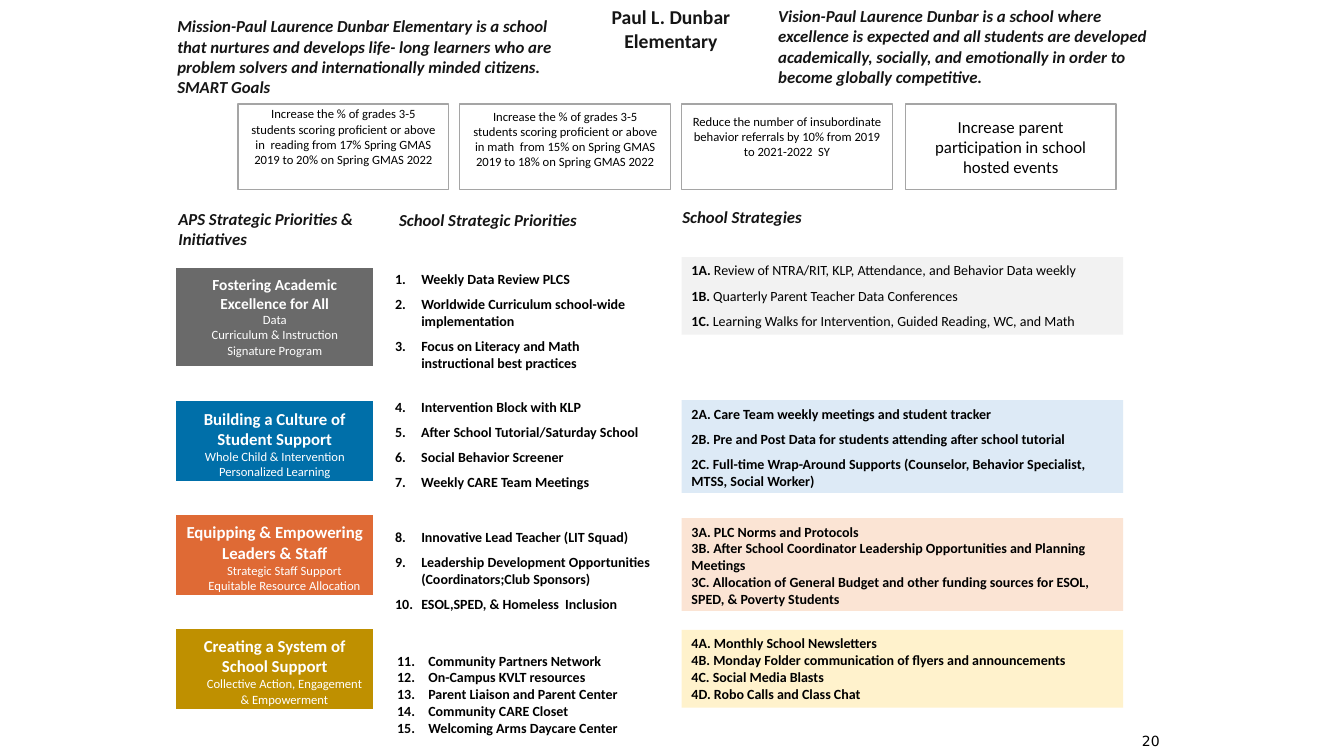
from lxml.etree import SubElement
from pptx import Presentation
from pptx.dml.color import RGBColor
from pptx.enum.shapes import MSO_SHAPE
from pptx.enum.text import MSO_ANCHOR, PP_ALIGN
from pptx.oxml.ns import qn
from pptx.util import Pt

PX = 9144
BLACK = RGBColor(0x00, 0x00, 0x00)
INK = RGBColor(0x15, 0x15, 0x15)
WHITE = RGBColor(0xFF, 0xFF, 0xFF)
BORDER = RGBColor(0xA5, 0xA5, 0xA5)
GRAY = RGBColor(0x6A, 0x6A, 0x6A)
BLUE = RGBColor(0x00, 0x6F, 0xA9)
ORANGE = RGBColor(0xDF, 0x6A, 0x35)
GOLD = RGBColor(0xBF, 0x90, 0x00)
PALE_GRAY = RGBColor(0xF2, 0xF2, 0xF2)
PALE_BLUE = RGBColor(0xDD, 0xEA, 0xF6)
PALE_ORANGE = RGBColor(0xFB, 0xE4, 0xD4)
PALE_GOLD = RGBColor(0xFF, 0xF2, 0xCC)

prs = Presentation()
prs.slide_width = 1333 * PX
prs.slide_height = 750 * PX
s = prs.slides.add_slide(prs.slide_layouts[6])


def add_box(left, top, width, height, fill=None, line=None, weight=1,
            anchor=MSO_ANCHOR.TOP, pad=5, pad_bottom=5):
    place = [v * PX for v in (left, top, width, height)]
    if fill is None:
        sp = s.shapes.add_textbox(*place)
    else:
        sp = s.shapes.add_shape(MSO_SHAPE.RECTANGLE, *place)
        sp.shadow.inherit = False
        sp.fill.solid()
        sp.fill.fore_color.rgb = fill
        if line is None:
            sp.line.fill.background()
        else:
            sp.line.color.rgb = line
            sp.line.width = Pt(weight)
    tf = sp.text_frame
    tf.word_wrap = True
    tf.vertical_anchor = anchor
    tf.margin_left = tf.margin_right = 10 * PX
    tf.margin_top = pad * PX
    tf.margin_bottom = pad_bottom * PX
    return tf


def write(tf, text, size=10, color=BLACK, bold=False, italic=False, lead="",
          align=PP_ALIGN.LEFT, before=0, indent=0, start=None, font="Calibri"):
    p = tf.paragraphs[0]
    if p.runs:
        p = tf.add_paragraph()
    p.alignment = align
    p.space_before = Pt(before)
    pPr = p._p.get_or_add_pPr()
    pPr.set("marL", str(indent * PX))
    pPr.set("indent", str(-indent * PX if start else 0))
    if start:
        SubElement(pPr, qn("a:buAutoNum"), type="arabicPeriod", startAt=str(start))
    for part, heavy in ((lead, True), (text, bold)):
        if part:
            r = p.add_run()
            r.text = part
            r.font.name = font
            r.font.size = Pt(size)
            r.font.bold = heavy
            r.font.italic = italic
            r.font.color.rgb = color


headings = [
    (166, 6, 398, 81, "Mission-Paul Laurence Dunbar Elementary is a school that nurtures and "
     "develops life- long learners who are problem solvers and internationally minded citizens."),
    (762, -4, 398, 101, "Vision-Paul Laurence Dunbar is a school where excellence is expected and "
     "all students are developed academically, socially, and emotionally in order to become "
     "globally competitive."),
    (166, 66, 201, 40, "SMART Goals"),
    (167, 197, 201, 61, "APS Strategic Priorities & Initiatives"),
    (386, 198, 201, 40, "School Strategic Priorities"),
    (667, 195, 201, 40, "School Strategies"),
]
for left, top, width, height, text in headings:
    tf = add_box(left, top, width, height, pad=10, pad_bottom=10)
    write(tf, text, size=12, color=INK, bold=True, italic=True)

tf = add_box(565, -5, 201, 67, pad=10, pad_bottom=10)
write(tf, "Paul L. Dunbar Elementary", size=14, color=INK, bold=True, align=PP_ALIGN.CENTER)

goals = [
    (236, 9, 25, "Increase the % of grades 3-5 students scoring proficient or above in  reading "
     "from 17% Spring GMAS 2019 to 20% on Spring GMAS 2022"),
    (456, 9, 20, "Increase the % of grades 3-5 students scoring proficient or above in math  "
     "from 15% on Spring GMAS 2019 to 18% on Spring GMAS 2022"),
    (676, 9, 25, "Reduce the number of insubordinate behavior referrals by 10% from 2019 "
     "to 2021-2022  SY"),
    (898, 12, 5, "Increase parent participation in school hosted events"),
]
for left, size, pad_bottom, text in goals:
    tf = add_box(left, 103, 209, 85, fill=WHITE, line=BORDER,
                 anchor=MSO_ANCHOR.MIDDLE, pad_bottom=pad_bottom)
    write(tf, text, size=size, align=PP_ALIGN.CENTER)

priorities = [
    (263, 103, GRAY, 11, 0, "Fostering Academic Excellence for All",
     ["Data", "Curriculum & Instruction", "Signature Program"]),
    (395, 85, BLUE, 12, 0, "Building a Culture of Student Support",
     ["Whole Child & Intervention", "Personalized Learning"]),
    (508, 85, ORANGE, 12, 19, "Equipping & Empowering Leaders & Staff",
     ["Strategic Staff Support", "Equitable Resource Allocation"]),
    (621, 85, GOLD, 12, 19, "Creating a System of School Support",
     ["Collective Action, Engagement & Empowerment"]),
]
for top, height, fill, size, indent, title, initiatives in priorities:
    tf = add_box(172, top, 201, height, fill=fill, line=WHITE, weight=4, pad=10, pad_bottom=10)
    write(tf, title, size=size, color=WHITE, bold=True, align=PP_ALIGN.CENTER)
    for text in initiatives:
        write(tf, text, size=9, color=WHITE, align=PP_ALIGN.CENTER, indent=indent)

school_priorities = [
    (382, 263, 265, 115, 6, 26, 1, [
        "Weekly Data Review PLCS",
        "Worldwide Curriculum school-wide implementation",
        "Focus on Literacy and Math instructional best practices"]),
    (382, 390, 283, 111, 6, 26, 4, [
        "Intervention Block with KLP",
        "After School Tutorial/Saturday School",
        "Social Behavior Screener",
        "Weekly CARE Team Meetings"]),
    (382, 519, 288, 100, 6, 26, 8, [
        "Innovative Lead Teacher (LIT Squad)",
        "Leadership Development Opportunities (Coordinators;Club Sponsors)",
        "ESOL,SPED, & Homeless  Inclusion"]),
    (384, 642, 265, 100, 0, 31, 11, [
        "Community Partners Network",
        "On-Campus KVLT resources",
        "Parent Liaison and Parent Center",
        "Community CARE Closet",
        "Welcoming Arms Daycare Center"]),
]
for left, top, width, height, before, indent, start, items in school_priorities:
    tf = add_box(left, top, width, height)
    for text in items:
        write(tf, text, bold=True, before=before, indent=indent, start=start)

strategies = [
    (255, 77, PALE_GRAY, False, 6, [
        ("1A.", " Review of NTRA/RIT, KLP, Attendance, and Behavior Data weekly"),
        ("1B.", " Quarterly Parent Teacher Data Conferences"),
        ("1C.", " Learning Walks for Intervention, Guided Reading, WC, and Math")]),
    (397, 92, PALE_BLUE, True, 6, [
        ("2A.", " Care Team weekly meetings and student tracker"),
        ("2B.", " Pre and Post Data for students attending after school tutorial"),
        ("2C.", " Full-time Wrap-Around Supports (Counselor, Behavior Specialist, MTSS, "
         "Social Worker)")]),
    (514, 92, PALE_ORANGE, True, 0, [
        ("3A.", " PLC Norms and Protocols"),
        ("3B.", " After School Coordinator Leadership Opportunities and Planning Meetings"),
        ("3C.", " Allocation of General Budget and other funding sources for ESOL, SPED, "
         "& Poverty Students")]),
    (625, 77, PALE_GOLD, True, 0, [
        ("4A.", " Monthly School Newsletters"),
        ("4B.", " Monday Folder communication of flyers and announcements"),
        ("4C.", " Social Media Blasts"),
        ("4D.", " Robo Calls and Class Chat")]),
]
for top, height, fill, bold, before, items in strategies:
    tf = add_box(676, top, 438, height, fill=fill)
    for i, (lead, text) in enumerate(items):
        write(tf, text, lead=lead, bold=bold, before=before if i else 0)

tf = add_box(935, 720, 225, 30, anchor=MSO_ANCHOR.MIDDLE)
write(tf, "20", align=PP_ALIGN.RIGHT, font="DejaVu Sans")

prs.save("out.pptx")
